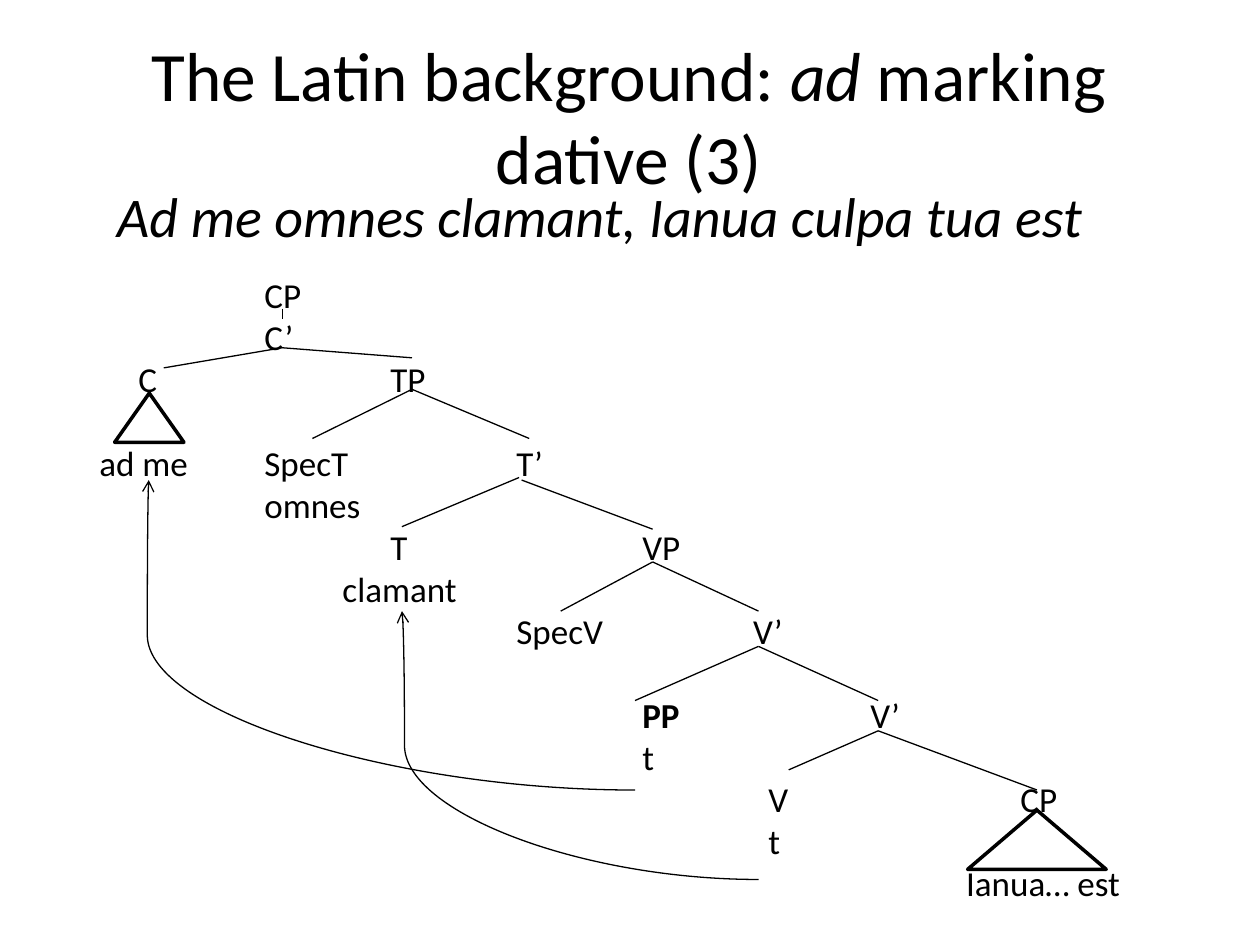
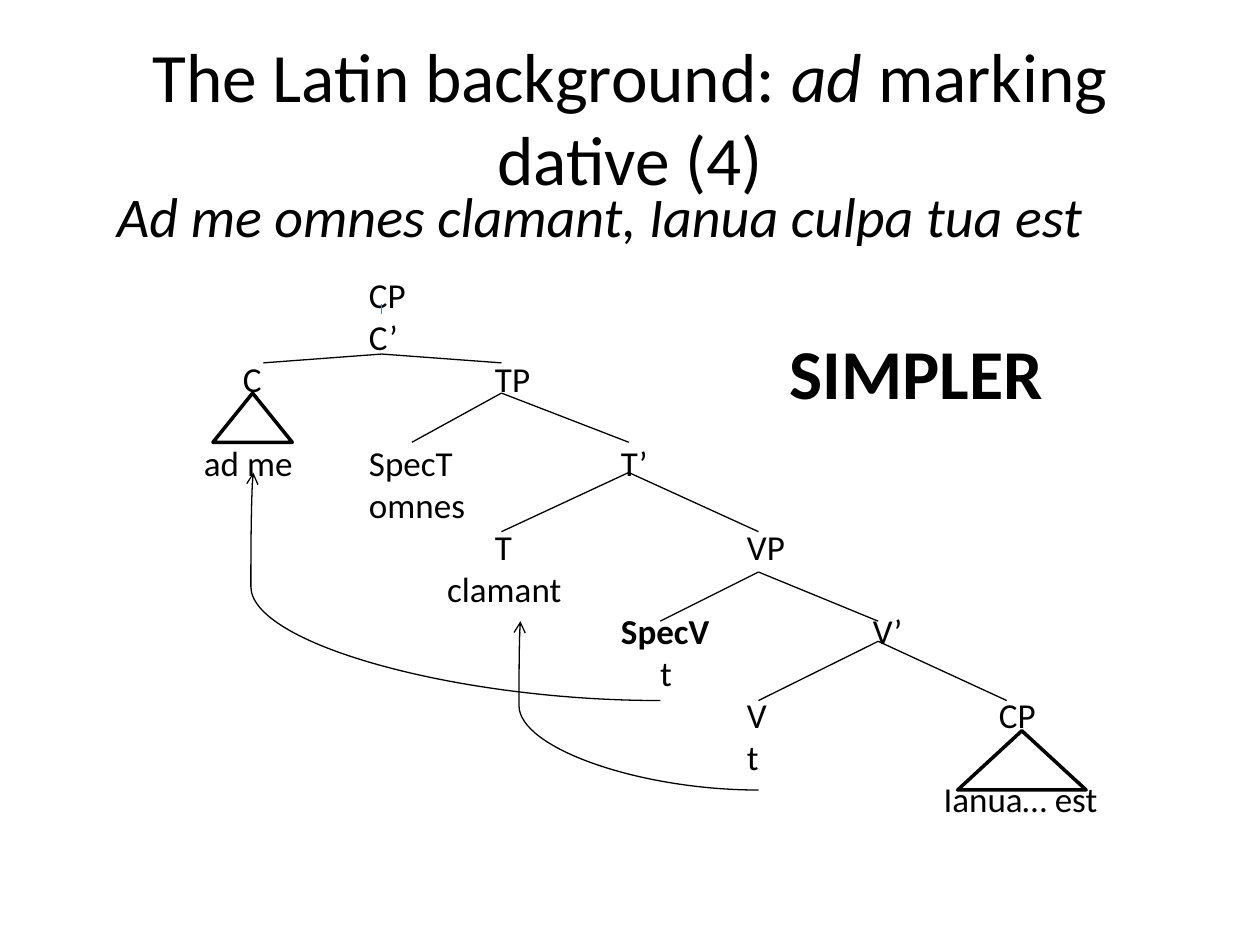
from pptx import Presentation
from pptx import util as u
from pptx.dml.color import RGBColor
from pptx.enum import shapes, text
from pptx.oxml import ns
from lxml import etree

FONT = "Calibri"
COLORS = {"ink": "000000", "paper": "FFFFFF", "accent": "4B7EBC"}
SENTENCE = "Ad me omnes clamant, Ianua culpa tua est"
ROW_HEIGHT = 24

TOP_ROWS = [
    [(2, "CP")],
    [(2, "C’")],
    [(1, "C"), (3, "TP")],
    [],
    [(0.69, "ad me"), (2, "SpecT"), (4, "T’")],
    [(2, "omnes")],
    [(3, "T"), (5, "VP")],
    [(2.62, "clamant")],
]


class TreeDeck:
    """Holds the deck's style and current slide, and draws its elements."""

    def __init__(self):
        self.presentation = Presentation()
        self.presentation.slide_width = u.Inches(10)
        self.presentation.slide_height = u.Inches(7.5)
        self.slide = None

    def new_slide(self, number, left, top):
        self.slide = self.presentation.slides.add_slide(self.presentation.slide_layouts[6])
        frame = self.text_box(left, top, 9, 1.25)
        frame.vertical_anchor = text.MSO_ANCHOR.MIDDLE
        paragraph = frame.paragraphs[0]
        paragraph.alignment = text.PP_ALIGN.CENTER
        self.run(paragraph, "The Latin background: ", 39.6)
        self.run(paragraph, "ad ", 39.6, italic=True)
        self.run(paragraph, f"marking dative ({number})", 39.6)
        self.phrase(SENTENCE, 0.83, 1.39, 8.32, 0.64, 32, italic=True)

    def text_box(self, left, top, width, height):
        shape = self.slide.shapes.add_textbox(*map(u.Inches, (left, top, width, height)))
        shape.text_frame.word_wrap = True
        return shape.text_frame

    def style(self, run, size, bold=False, italic=False):
        run.font.name = FONT
        run.font.size = u.Pt(size)
        run.font.bold = bold
        run.font.italic = italic
        run.font.color.rgb = RGBColor.from_string(COLORS["ink"])

    def run(self, paragraph, words, size, **emphasis):
        run = paragraph.add_run()
        run.text = words
        self.style(run, size, **emphasis)

    def phrase(self, words, left, top, width, height, size, **emphasis):
        frame = self.text_box(left, top, width, height)
        frame.text = words
        self.style(frame.paragraphs[0].runs[0], size, **emphasis)

    def tree_labels(self, rows, left, width, height, bold_label):
        frame = self.text_box(left, 2.12, width, height)
        paragraph, skipped = frame.paragraphs[0], 0
        for row in rows:
            if not row:
                skipped += 1
                continue
            if paragraph.runs:
                paragraph = frame.add_paragraph()
            paragraph.space_before = u.Pt(skipped * ROW_HEIGHT)
            skipped = 0
            properties = paragraph._p.get_or_add_pPr()
            stops = etree.SubElement(properties, ns.qn("a:tabLst"))
            for position, label in row:
                etree.SubElement(stops, ns.qn("a:tab"), pos=str(u.Inches(position)), algn="l")
                self.run(paragraph, "\t" + label, 20, bold=label == bold_label)

    def triangle(self, left, top, width, height):
        shape = self.slide.shapes.add_shape(
            shapes.MSO_SHAPE.ISOSCELES_TRIANGLE, *map(u.Inches, (left, top, width, height)))
        shape.shadow.inherit = False
        shape.fill.solid()
        shape.fill.fore_color.rgb = RGBColor.from_string(COLORS["paper"])
        shape.line.color.rgb = RGBColor.from_string(COLORS["ink"])
        shape.line.width = u.Pt(2)

    def line(self, start, end, color="ink", kind=shapes.MSO_CONNECTOR.STRAIGHT):
        connector = self.slide.shapes.add_connector(kind, *map(u.Inches, (*start, *end)))
        connector.line.color.rgb = RGBColor.from_string(COLORS[color])
        connector.line.width = u.Pt(0.75)
        etree.SubElement(connector._element.spPr, ns.qn("a:effectLst"))
        return connector

    def branches(self, nodes):
        for apex, *children in nodes:
            for child in children:
                self.line(apex, child)

    def movement(self, trace, landing, bend):
        connector = self.line(landing, trace, kind=shapes.MSO_CONNECTOR.CURVE)
        properties = connector._element.spPr
        properties.find(ns.qn("a:xfrm")).set("rot", str(180 * 60000))
        geometry = properties.find(ns.qn("a:prstGeom"))
        guides = geometry.find(ns.qn("a:avLst"))
        if guides is None:
            guides = etree.SubElement(geometry, ns.qn("a:avLst"))
        etree.SubElement(guides, ns.qn("a:gd"), name="adj1", fmla=f"val {bend}")
        etree.SubElement(properties.find(ns.qn("a:ln")), ns.qn("a:tailEnd"), type="arrow")


def build_full_tree(deck):
    """Draw the tree with a PP inside V’."""
    deck.new_slide(3, 0.49, 0.29)
    deck.tree_labels(TOP_ROWS + [
        [(4, "SpecV"), (5.88, "V’")],
        [],
        [(5, "PP"), (6.81, "V’")],
        [(5, "t")],
        [(6, "V"), (8, "CP")],
        [(6, "t")],
        [(7.57, "Ianua… est")],
    ], 0, 10, 5.15, "PP")
    deck.triangle(7.68, 6.43, 1.1, 0.47)
    deck.triangle(0.91, 3.12, 0.55, 0.39)
    deck.movement((6.02, 6.98), (3.19, 4.85), 99300)
    deck.movement((5.04, 6.27), (1.18, 3.81), 100300)
    deck.line((2.24, 2.45), (2.24, 2.53))
    deck.branches([
        [(2.24, 2.76), (1.3, 2.92), (3.27, 2.84)],
        [(3.27, 3.09), (2.48, 3.48), (4.2, 3.48)],
        [(4.12, 3.79), (3.19, 4.18)],
        [(4.14, 3.81), (5.18, 4.2)],
        [(5.18, 4.46), (4.45, 4.85), (6.02, 4.85)],
        [(6.02, 5.13), (5.04, 5.56), (6.97, 5.56)],
        [(6.97, 5.8), (6.26, 6.11), (8.23, 6.27)],
    ])


def build_simpler_tree(deck):
    """Draw the tree that starts the movement in SpecV."""
    deck.new_slide(4, 0.5, 0.3)
    deck.tree_labels(TOP_ROWS + [
        [(4, "SpecV"), (6, "V’")],
        [(4.31, "t")],
        [(5, "V"), (7, "CP")],
        [(5, "t")],
        [(6.56, "Ianua… est")],
    ], 0.83, 8.32, 4.48, "SpecV")
    deck.line((3.03, 2.41), (3.03, 2.49), "accent")
    deck.branches([
        [(3.03, 2.81), (2.09, 2.88), (3.98, 2.88)],
        [(3.98, 3.12), (3.27, 3.51), (4.99, 3.51)],
        [(4.99, 3.75), (3.98, 4.22), (6.02, 4.22)],
        [(6.02, 4.54), (5.24, 4.93), (6.97, 4.93)],
        [(6.97, 5.09), (6.02, 5.56), (7.99, 5.56)],
    ])
    deck.triangle(1.69, 3.12, 0.63, 0.39)
    deck.triangle(7.6, 5.8, 1.02, 0.47)
    deck.movement((6.02, 6.27), (4.13, 4.93), 100600)
    deck.movement((5.24, 5.56), (2.01, 3.75), 100600)
    deck.phrase("SIMPLER", 6.17, 2.57, 2.62, 0.77, 40, bold=True)


def main():
    """Build both slides and save the deck."""
    deck = TreeDeck()
    build_full_tree(deck)
    build_simpler_tree(deck)
    deck.presentation.save("out.pptx")


if __name__ == "__main__":
    main()
